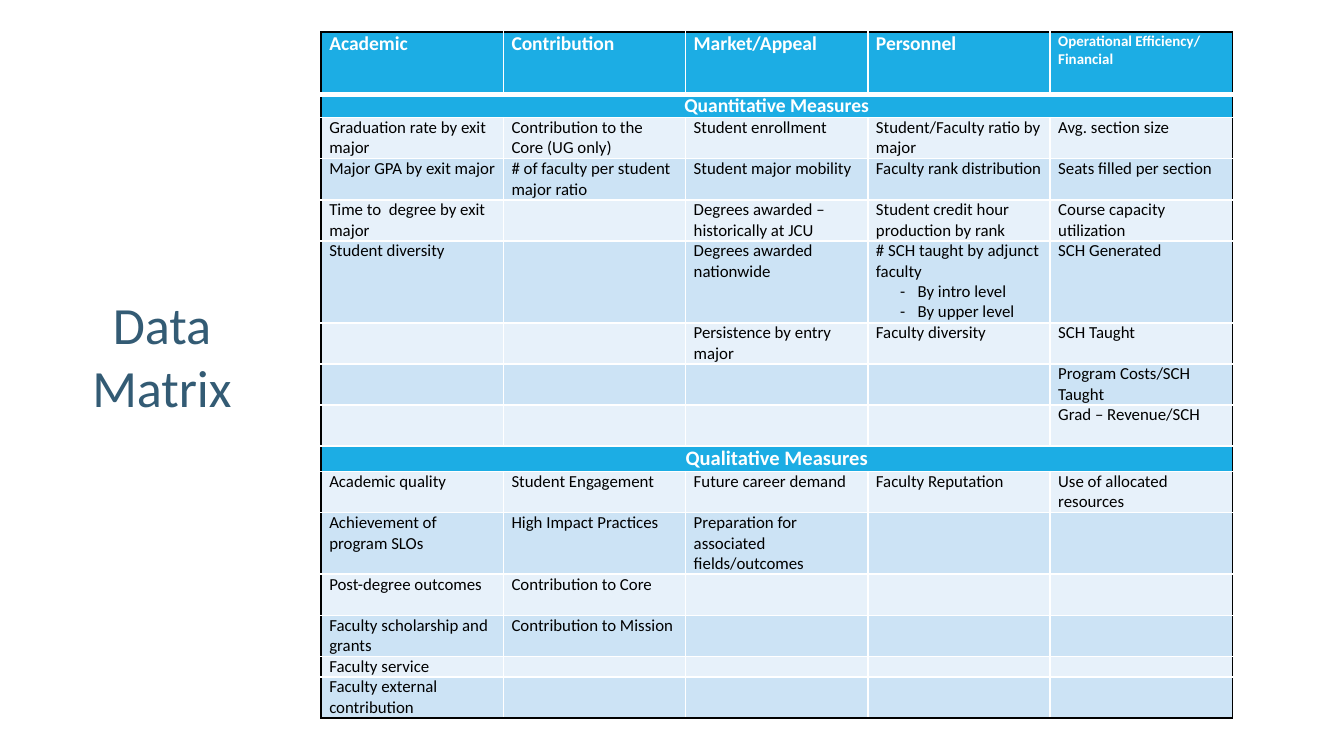
from lxml.etree import SubElement
from pptx import Presentation
from pptx.dml.color import RGBColor
from pptx.enum.text import MSO_ANCHOR as Anchor, PP_ALIGN as Align
from pptx.oxml.ns import qn
from pptx.util import Inches, Pt

WHITE = RGBColor(0xFF, 0xFF, 0xFF)
BLACK = RGBColor(0x00, 0x00, 0x00)
SLATE = RGBColor(0x33, 0x5B, 0x74)
SKY = RGBColor(0x1C, 0xAD, 0xE4)
PALE = RGBColor(0xE7, 0xF1, 0xFA)
LIGHT = RGBColor(0xCC, 0xE3, 0xF5)
LINE_HEIGHT = 11 / 72

HEADERS = ["Academic", "Contribution", "Market/Appeal", "Personnel",
           "Operational Efficiency/ Financial"]
QUANTITATIVE = [
    (2, ["Graduation rate by exit major", "Contribution to the Core (UG only)",
         "Student enrollment", "Student/Faculty ratio by major", "Avg. section size"]),
    (2, ["Major GPA by exit major", "# of faculty per student major ratio",
         "Student major mobility", "Faculty rank distribution",
         "Seats filled per section"]),
    (2, ["Time to  degree by exit major", "", "Degrees awarded – historically at JCU",
         "Student credit hour production by rank", "Course capacity utilization"]),
    (4, ["Student diversity", "", "Degrees awarded nationwide",
         "# SCH taught by adjunct faculty\n- By intro level\n- By upper level",
         "SCH Generated"]),
    (2, ["", "", "Persistence by entry major", "Faculty diversity", "SCH Taught"]),
    (2, ["", "", "", "", "Program Costs/SCH Taught"]),
    (2, ["", "", "", "", "Grad – Revenue/SCH"]),
]
QUALITATIVE = [
    (2, ["Academic quality", "Student Engagement", "Future career demand",
         "Faculty Reputation", "Use of allocated resources"]),
    (3, ["Achievement of program SLOs", "High Impact Practices",
         "Preparation for associated fields/outcomes", "", ""]),
    (2, ["Post-degree outcomes", "Contribution to Core", "", "", ""]),
    (2, ["Faculty scholarship and grants", "Contribution to Mission", "", "", ""]),
    (1, ["Faculty service", "", "", "", ""]),
    (2, ["Faculty external contribution", "", "", "", ""]),
]


def write_text(frame, text, size=9, color=BLACK, bold=False, align=Align.LEFT, font="Calibri"):
    for index, line in enumerate(text.split("\n")):
        para = frame.paragraphs[0] if index == 0 else frame.add_paragraph()
        para.alignment = align
        if not line:
            SubElement(para._p, qn("a:endParaRPr"), sz=str(int(size * 100)))
            continue
        if line.startswith("- "):
            line = line[2:]
            properties = para._p.get_or_add_pPr()
            properties.set("marL", str(Inches(0.31)))
            properties.set("indent", str(Inches(-0.13)))
            SubElement(properties, qn("a:buFont"), typeface=font)
            SubElement(properties, qn("a:buChar"), char="-")
        span = para.add_run()
        span.text = line
        span.font.name = font
        span.font.size = Pt(size)
        span.font.bold = bold
        span.font.color.rgb = color


class MatrixSlide:
    def __init__(self, deck):
        self.page = deck.slides.add_slide(deck.slide_layouts[6])
        self.font = "Calibri"

    def title(self, text, left, top, width, height):
        box = self.page.shapes.add_textbox(
            Inches(left), Inches(top), Inches(width), Inches(height))
        box.text_frame.word_wrap = True
        box.text_frame.vertical_anchor = Anchor.MIDDLE
        write_text(box.text_frame, text, size=28, color=SLATE, align=Align.CENTER,
                   font=self.font)

    def cell(self, cell, text, fill, borders, **style):
        cell.margin_left = cell.margin_right = Inches(0.06)
        cell.margin_top = cell.margin_bottom = 0
        for side, (color, width) in borders.items():
            line = SubElement(cell._tc.get_or_add_tcPr(), qn(f"a:ln{side}"), w=str(Pt(width)))
            SubElement(SubElement(line, qn("a:solidFill")), qn("a:srgbClr"), val=str(color))
        cell.fill.solid()
        cell.fill.fore_color.rgb = fill
        write_text(cell.text_frame, text, font=self.font, **style)

    def matrix(self, headers, sections, left, top, width):
        rows = [(0.46, headers, SKY,
                 [dict(size=8 if len(text) > 20 else 10.5, color=WHITE, bold=True)
                  for text in headers])]
        banners = set()
        for heading, height, size, measures in sections:
            banners.add(len(rows))
            style = dict(size=size, color=WHITE, bold=True, align=Align.CENTER)
            blanks = [""] * (len(headers) - 1)
            rows.append((height, [heading] + blanks, SKY, [style] * len(headers)))
            for index, (lines, texts) in enumerate(measures):
                band = LIGHT if index % 2 else PALE
                rows.append((lines * LINE_HEIGHT, texts, band, [{}] * len(headers)))

        total = sum(row[0] for row in rows)
        table = self.page.shapes.add_table(
            len(rows), len(headers), Inches(left), Inches(top),
            Inches(width), Inches(total)).table
        table.horz_banding = False
        for column in table.columns:
            column.width = Inches(width / len(headers))

        last_row, last_column = len(rows) - 1, len(headers) - 1
        for r, (height, texts, fill, styles) in enumerate(rows):
            table.rows[r].height = Inches(height)
            if r in banners:
                table.cell(r, 0).merge(table.cell(r, last_column))
            for c, text in enumerate(texts):
                at_right = c == last_column or r in banners
                borders = {
                    "L": (WHITE if c else BLACK, 1),
                    "R": (BLACK if at_right else WHITE, 1),
                    "T": (WHITE if r else BLACK, 1),
                    "B": (BLACK if r == last_row else WHITE, 1 if r else 3),
                }
                self.cell(table.cell(r, c), text, fill, borders, **styles[c])


def main():
    deck = Presentation()
    deck.slide_width = Inches(10)
    deck.slide_height = Inches(10 * 9 / 16)
    slide = MatrixSlide(deck)
    slide.title("Data Matrix", 0.41, 0.63, 1.59, 4.03)
    sections = [("Quantitative Measures", 0.17, 10.5, QUANTITATIVE),
                ("Qualitative Measures", 0.19, 11, QUALITATIVE)]
    slide.matrix(HEADERS, sections, 2.39, 0.24, 6.78)
    deck.save("out.pptx")


if __name__ == "__main__":
    main()
